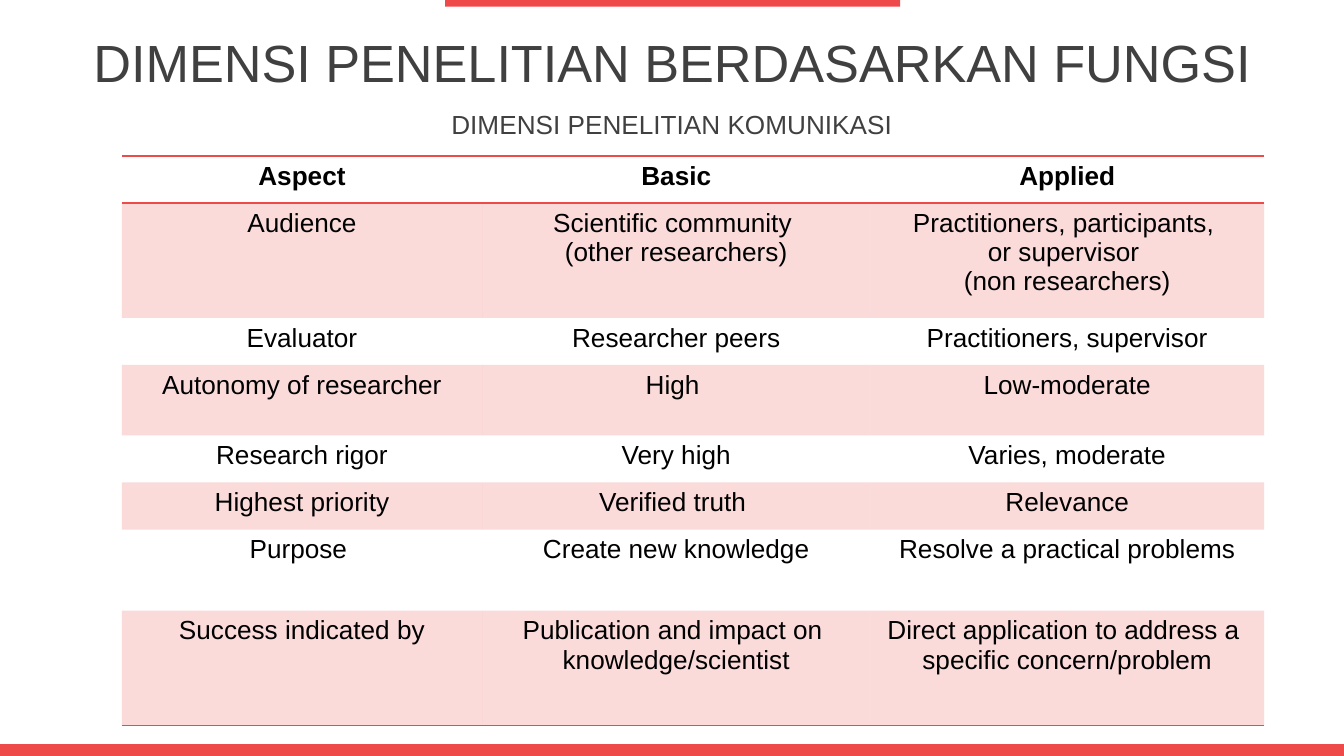
from typing import NamedTuple

from lxml.etree import SubElement
from pptx import Presentation
from pptx.dml.color import RGBColor
from pptx.enum.shapes import MSO_SHAPE
from pptx.enum.text import MSO_ANCHOR, PP_ALIGN
from pptx.oxml import parse_xml
from pptx.oxml.ns import nsdecls, qn
from pptx.util import Pt

FONT = "Arial"
RED, GREY, BLACK = "EF4A4A", "404040", "000000"


class Box(NamedTuple):
    left: float
    top: float
    width: float
    height: float


class Heading(NamedTuple):
    text: str
    box: Box
    size: float


class Row(NamedTuple):
    height: float
    cells: tuple[str, str, str]


BARS = [Box(238.4, 0, 243.8, 3.6), Box(0, 398.7, 720, 6.3)]
HEADINGS = [
    Heading("DIMENSI PENELITIAN BERDASARKAN FUNGSI", Box(0, 10.1, 720, 45.4), 28),
    Heading("DIMENSI PENELITIAN KOMUNIKASI", Box(0, 55.5, 720, 22.3), 14),
]
TABLE_LEFT, TABLE_TOP = 65.3, 83.5
COLUMNS = [193, 208, 211]
ROWS = [
    Row(25.2, ("Aspect", "Basic", "Applied")),
    Row(61.6, ("Audience", "Scientific community \n(other researchers)",
               "Practitioners, participants, \nor supervisor \n(non researchers)")),
    Row(25.2, ("Evaluator", "Researcher peers", "Practitioners, supervisor")),
    Row(37.8, ("Autonomy of researcher", "High ", "Low-moderate")),
    Row(25.2, ("Research rigor", "Very high", "Varies, moderate")),
    Row(25.2, ("Highest priority", "Verified truth ", "Relevance")),
    Row(43.4, ("Purpose ", "Create new knowledge", "Resolve a practical problems")),
    Row(61.6, ("Success indicated by", "Publication and impact on \nknowledge/scientist",
               "Direct application to address a \nspecific concern/problem")),
]


def rgb(value: str) -> RGBColor:
    return RGBColor.from_string(value)


def format_text(tf, size: float, color: str, bold: bool = False) -> None:
    for p in tf.paragraphs:
        p.alignment = PP_ALIGN.CENTER
        for r in p.runs:
            r.font.name = FONT
            r.font.size = Pt(size)
            r.font.bold = bold
            r.font.color.rgb = rgb(color)


def draw_bar(s, box: Box) -> None:
    sp = s.shapes.add_shape(MSO_SHAPE.RECTANGLE, *map(Pt, box))
    sp.shadow.inherit = False
    sp.fill.solid()
    sp.fill.fore_color.rgb = rgb(RED)
    sp.line.fill.background()


def draw_heading(s, heading: Heading) -> None:
    tf = s.shapes.add_textbox(*map(Pt, heading.box)).text_frame
    tf.word_wrap = True
    tf.vertical_anchor = MSO_ANCHOR.MIDDLE
    tf.text = heading.text
    format_text(tf, heading.size, GREY)


def fill_cell(cell, shaded: bool) -> None:
    """Tint a shaded cell at 20 % opacity and clear any other."""
    if not shaded:
        cell.fill.background()
        return
    cell.fill.solid()
    cell.fill.fore_color.rgb = rgb(RED)
    color = cell._tc.tcPr.find(f"{qn('a:solidFill')}/{qn('a:srgbClr')}")
    SubElement(color, qn("a:alpha"), val="20000")


def set_borders(cell, ruled: str) -> None:
    """Rule the sides named in ruled (T, B) and clear the others."""
    for i, side in enumerate("LRTB"):
        paint = (f'<a:solidFill><a:srgbClr val="{RED}"/></a:solidFill>'
                 if side in ruled else "<a:noFill/>")
        line = parse_xml(f'<a:ln{side} {nsdecls("a")} w="{Pt(1)}">{paint}</a:ln{side}>')
        cell._tc.tcPr.insert(i, line)


def draw_table(s, rows: list[Row]) -> None:
    box = Box(TABLE_LEFT, TABLE_TOP, sum(COLUMNS), sum(row.height for row in rows))
    table = s.shapes.add_table(len(rows), len(COLUMNS), *map(Pt, box)).table
    table.first_row = table.horz_banding = False
    for column, width in zip(table.columns, COLUMNS):
        column.width = Pt(width)
    ruled = {0: "TB", 1: "T", len(rows) - 1: "B"}
    for i, row in enumerate(rows):
        table.rows[i].height = Pt(row.height)
        for j, text in enumerate(row.cells):
            cell = table.cell(i, j)
            cell.margin_left = cell.margin_right = Pt(7.2)
            cell.margin_top = cell.margin_bottom = Pt(3)
            cell.text_frame.text = text
            format_text(cell.text_frame, 14, BLACK, bold=i == 0)
            fill_cell(cell, shaded=i % 2 == 1)
            set_borders(cell, ruled.get(i, ""))


def main() -> None:
    prs = Presentation()
    prs.slide_width, prs.slide_height = Pt(720), Pt(405)
    s = prs.slides.add_slide(prs.slide_layouts[6])
    for bar in BARS:
        draw_bar(s, bar)
    for heading in HEADINGS:
        draw_heading(s, heading)
    draw_table(s, ROWS)
    prs.save("out.pptx")


if __name__ == "__main__":
    main()
